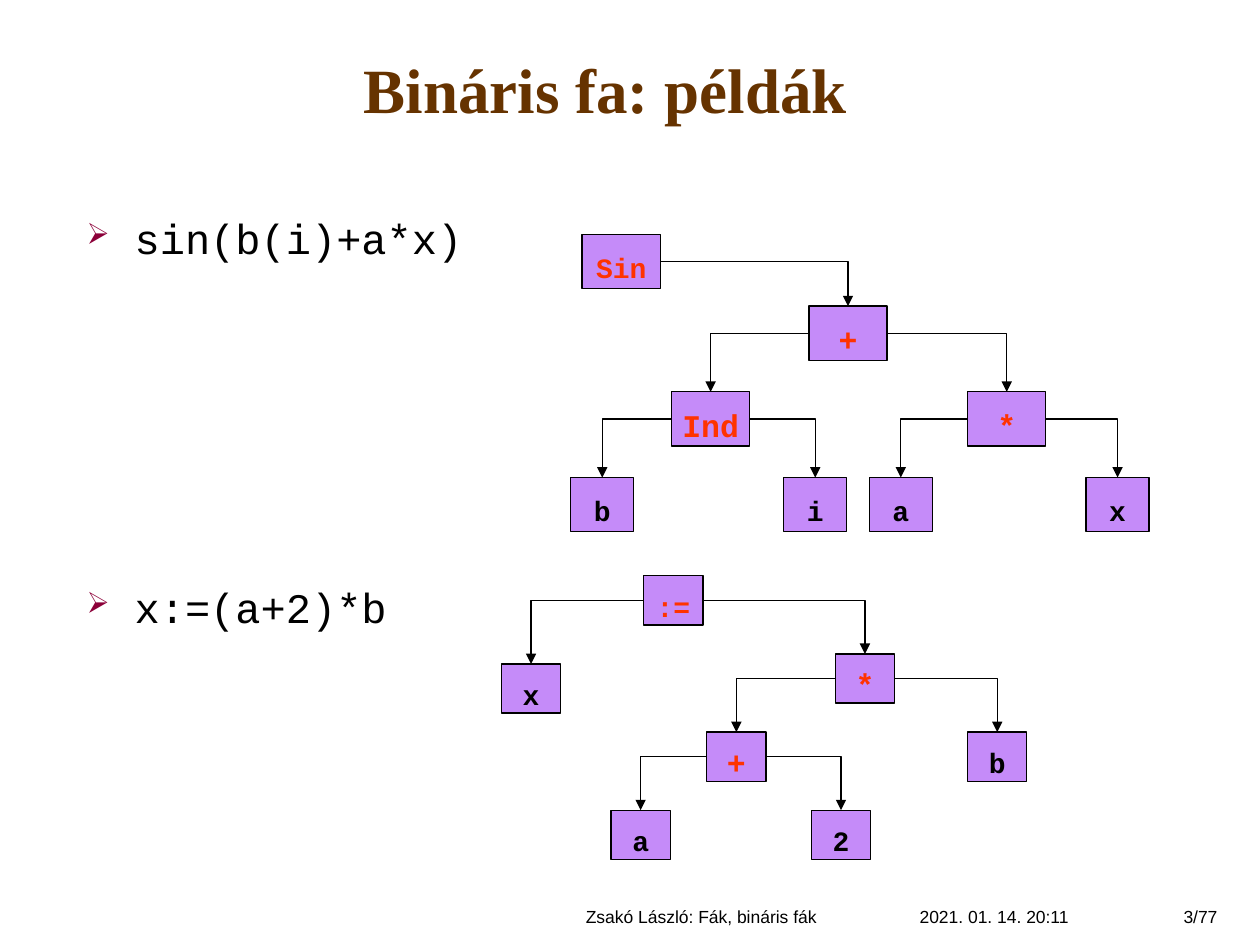
"""Build a slide showing two expressions as binary trees."""
from dataclasses import dataclass
from typing import Optional

from lxml import etree
from pptx import Presentation
from pptx.dml.color import RGBColor
from pptx.enum.shapes import MSO_CONNECTOR, MSO_SHAPE
from pptx.enum.text import MSO_ANCHOR, PP_ALIGN
from pptx.oxml.ns import qn
from pptx.shapes.autoshape import Shape
from pptx.shapes.shapetree import GroupShapes
from pptx.slide import Slide
from pptx.text.text import _Paragraph
from pptx.util import Inches, Pt

BROWN = RGBColor(0x66, 0x33, 0x00)
BLACK = RGBColor(0x00, 0x00, 0x00)
LILAC = RGBColor(0xC5, 0x8B, 0xF9)
ORANGE = RGBColor(0xFF, 0x33, 0x00)
WINE = RGBColor(0x8C, 0x00, 0x39)

RECTANGLE = MSO_SHAPE.RECTANGLE
ELBOW = MSO_CONNECTOR.ELBOW
TOP, MIDDLE = MSO_ANCHOR.TOP, MSO_ANCHOR.MIDDLE
LEFT, CENTER, RIGHT = PP_ALIGN.LEFT, PP_ALIGN.CENTER, PP_ALIGN.RIGHT
TOP_SITE, LEFT_SITE, RIGHT_SITE = 0, 1, 3
CODE_FONT = "Courier New"


@dataclass(frozen=True)
class Node:
    label: str
    left: float
    top: float
    size: int = 16
    left_child: Optional["Node"] = None
    right_child: Optional["Node"] = None


@dataclass(frozen=True)
class Tree:
    root: Node
    operator_width: float
    leaf_width: float
    height: float


@dataclass(frozen=True)
class Label:
    text: str
    left: float
    top: float
    width: float
    height: float
    size: int
    font: str
    color: RGBColor = BLACK
    bold: bool = False
    align: PP_ALIGN = LEFT
    anchor: MSO_ANCHOR = TOP


LABELS = [
    Label("Bináris fa: példák", 1.38, 0.09, 6.85, 1.22, 36, "Times New Roman",
          BROWN, True, CENTER, MIDDLE),
    Label("Zsakó László: Fák, bináris fák", 3.98, 7.14, 3.17, 0.36, 10, "Arial",
          align=CENTER),
    Label("2021. 01. 14. 20:11", 7.2, 7.14, 1.65, 0.36, 10, "Arial"),
    Label("3/77", 9.17, 7.14, 0.59, 0.36, 10, "Arial", align=RIGHT),
]

EXPRESSIONS = ["sin(b(i)+a*x)", "x:=(a+2)*b"]

SINE_TREE = Tree(
    Node("Sin", 4.62, 1.86, right_child=Node(
        "+", 6.42, 2.43, 18,
        Node("Ind", 5.33, 3.11, 18, Node("b", 4.53, 3.79), Node("i", 6.22, 3.79)),
        Node("*", 7.68, 3.11, 18, Node("a", 6.9, 3.79), Node("x", 8.62, 3.79)))),
    operator_width=0.62, leaf_width=0.5, height=0.43)

ASSIGNMENT_TREE = Tree(
    Node(":=", 5.11, 4.57, 16,
         Node("x", 3.98, 5.27),
         Node("*", 6.63, 5.19, 18,
              Node("+", 5.61, 5.81, 18, Node("a", 4.85, 6.43), Node("2", 6.44, 6.43)),
              Node("b", 7.68, 5.81))),
    operator_width=0.47, leaf_width=0.47, height=0.39)


def style_text(para: _Paragraph, font: str, size: int, color: RGBColor, bold: bool) -> None:
    """Set the font of a whole paragraph."""
    para.font.name = font
    para.font.size = Pt(size)
    para.font.color.rgb = color
    para.font.bold = bold


def add_label(page: Slide, label: Label) -> None:
    """Add a single-paragraph text box."""
    box = page.shapes.add_textbox(Inches(label.left), Inches(label.top),
                                  Inches(label.width), Inches(label.height))
    frame = box.text_frame
    frame.word_wrap = True
    frame.vertical_anchor = label.anchor
    para = frame.paragraphs[0]
    para.text = label.text
    para.alignment = label.align
    style_text(para, label.font, label.size, label.color, label.bold)


def add_bullet(para: _Paragraph) -> None:
    """Give a paragraph a hanging arrow bullet."""
    properties = para._p.get_or_add_pPr()
    properties.set("marL", str(Inches(0.38)))
    properties.set("indent", str(-Inches(0.38)))
    color = etree.SubElement(properties, qn("a:buClr"))
    etree.SubElement(color, qn("a:srgbClr"), val=str(WINE))
    etree.SubElement(properties, qn("a:buSzPct"), val="70000")
    etree.SubElement(properties, qn("a:buChar"), char="➢")


def add_expressions(page: Slide) -> None:
    """Add the bulleted expressions, each level with its tree."""
    box = page.shapes.add_textbox(Inches(0.59), Inches(1.68), Inches(8.43), Inches(3.5))
    frame = box.text_frame
    frame.word_wrap = True
    for index, expression in enumerate(EXPRESSIONS):
        para = frame.add_paragraph() if index else frame.paragraphs[0]
        para.text = expression
        add_bullet(para)
        para.line_spacing = 0.9
        para.space_before = Pt(185 if index else 0)
        style_text(para, CODE_FONT, 24, BLACK, False)


def add_edge(shapes: GroupShapes, parent: Shape, site: int, child: Shape) -> None:
    """Join a side of the parent to the top of the child with an arrow."""
    edge = shapes.add_connector(ELBOW, 0, 0, 0, 0)
    edge.begin_connect(parent, site)
    edge.end_connect(child, TOP_SITE)
    edge.line.color.rgb = BLACK
    edge.line.width = Pt(0.75)
    properties = edge._element.spPr
    properties.find(qn("a:prstGeom")).set("prst", "bentConnector2")
    etree.SubElement(properties.find(qn("a:ln")), qn("a:tailEnd"), type="triangle")
    etree.SubElement(properties, qn("a:effectLst"))


def add_node(shapes: GroupShapes, tree: Tree, node: Node) -> Shape:
    """Draw a node with everything below it and return its box."""
    children = [(site, child) for site, child in
                ((LEFT_SITE, node.left_child), (RIGHT_SITE, node.right_child)) if child]
    width = tree.operator_width if children else tree.leaf_width
    box = shapes.add_shape(RECTANGLE, Inches(node.left), Inches(node.top),
                           Inches(width), Inches(tree.height))
    box.shadow.inherit = False
    box.fill.solid()
    box.fill.fore_color.rgb = LILAC
    box.line.color.rgb = BLACK
    box.line.width = Pt(0.75)
    frame = box.text_frame
    frame.word_wrap = False
    frame.vertical_anchor = MIDDLE
    frame.margin_top = Inches(0.09)
    frame.margin_bottom = 0
    para = frame.paragraphs[0]
    para.text = node.label
    para.alignment = CENTER
    style_text(para, CODE_FONT, node.size, ORANGE if children else BLACK, True)
    for site, child in children:
        add_edge(shapes, box, site, add_node(shapes, tree, child))
    return box


def main() -> None:
    """Build and save the deck."""
    deck = Presentation()
    deck.slide_width = Inches(10)
    deck.slide_height = Inches(7.5)
    page = deck.slides.add_slide(deck.slide_layouts[6])
    for label in LABELS:
        add_label(page, label)
    add_expressions(page)
    for tree in (SINE_TREE, ASSIGNMENT_TREE):
        add_node(page.shapes.add_group_shape().shapes, tree, tree.root)
    deck.save("out.pptx")


if __name__ == "__main__":
    main()
